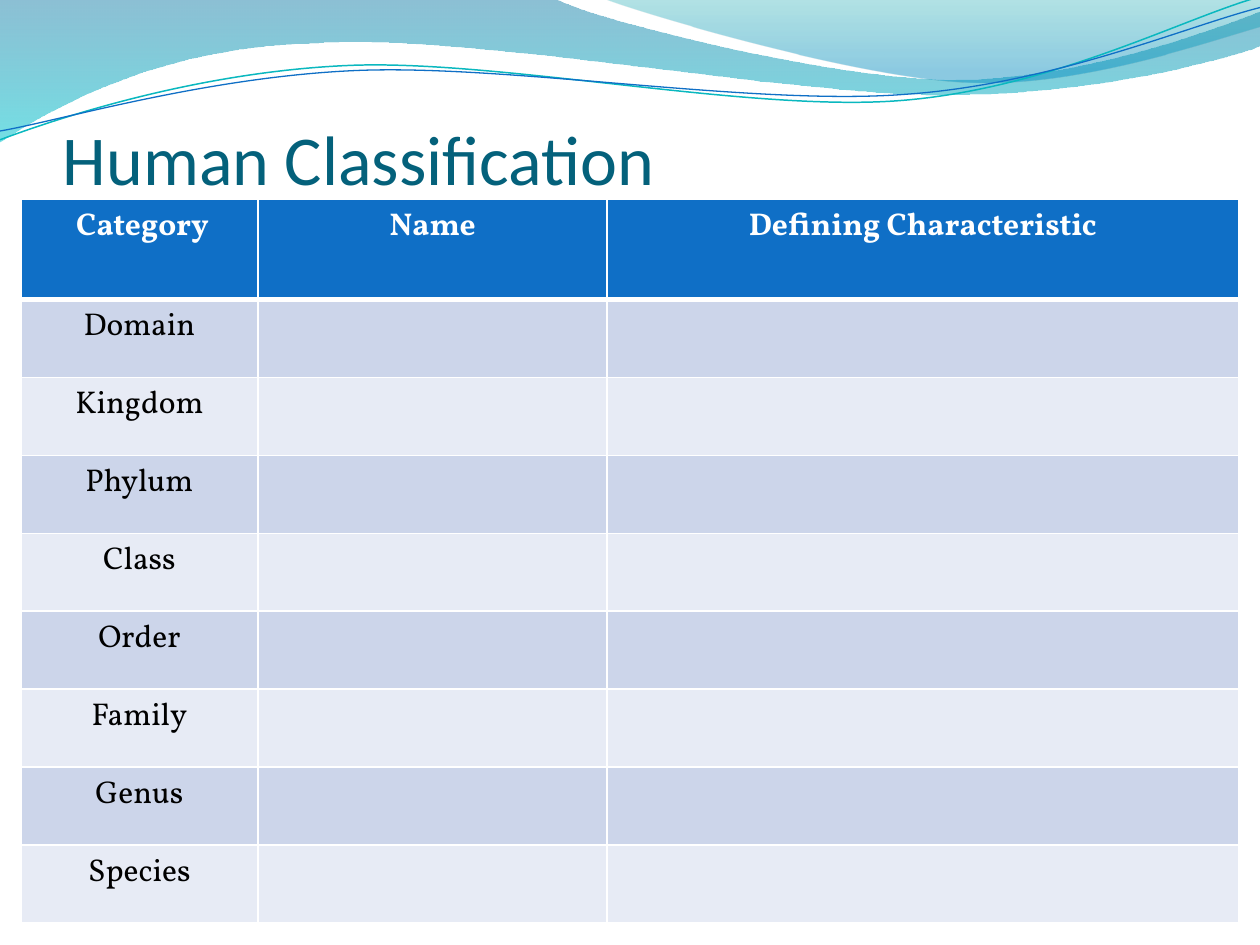
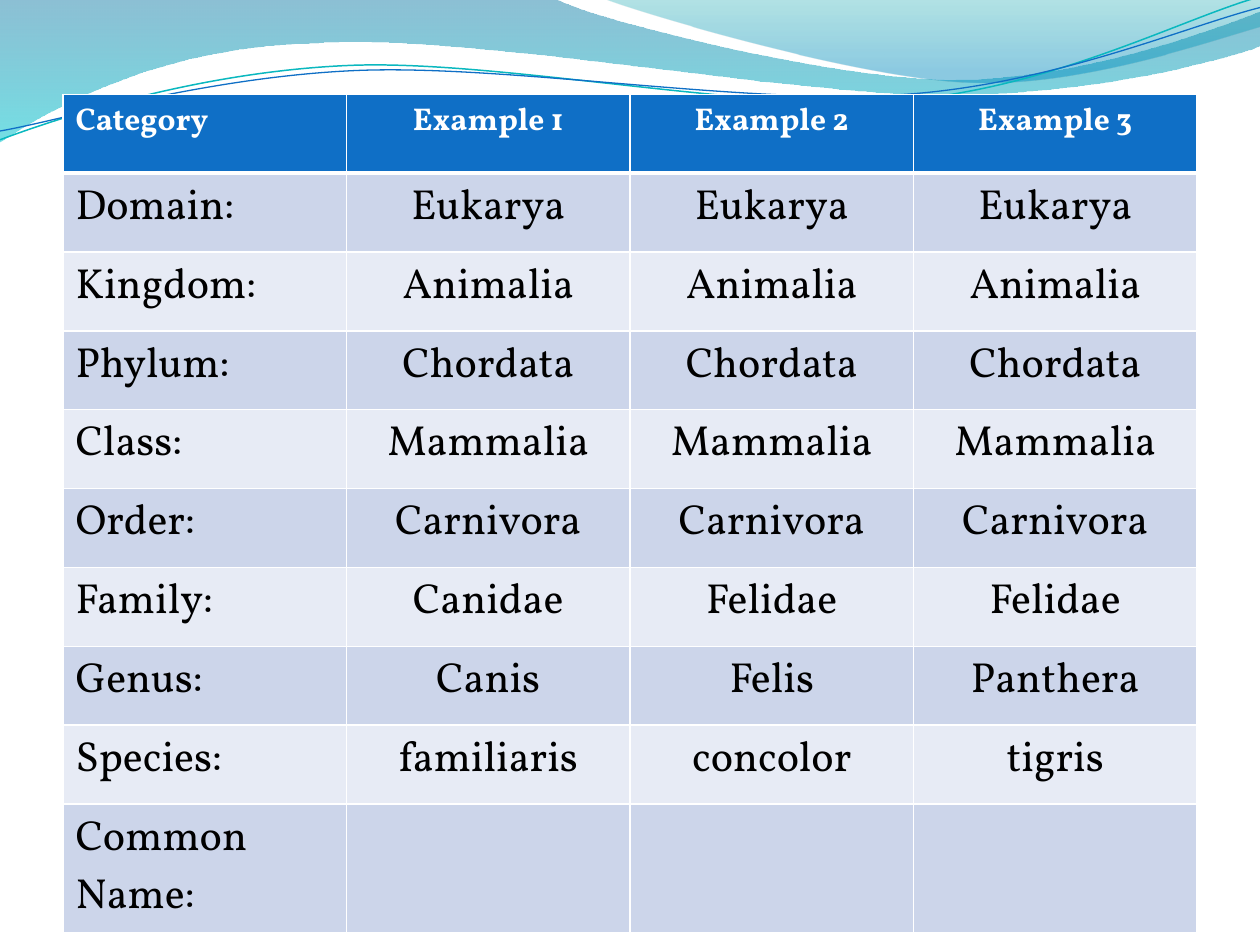
from dataclasses import dataclass

from lxml.etree import SubElement
from pptx import Presentation
from pptx.dml.color import RGBColor
from pptx.enum.text import MSO_ANCHOR, PP_ALIGN
from pptx.oxml import parse_xml
from pptx.oxml.ns import nsdecls, qn
from pptx.util import Cm, Pt


@dataclass(frozen=True)
class Theme:
    title_color: str = "04617B"
    header_fill: str = "0F6FC6"
    header_text: str = "FFFFFF"
    body_text: str = "000000"
    odd_row: str = "CCD5EA"
    even_row: str = "E7EBF5"
    rule: str = "FFFFFF"
    teal_line: str = "0AB8BF"
    blue_line: str = "0F6FC6"
    broad_wave: tuple = ((0, "0074A1", 45), (1, "00C6CF", 55))
    corner_wave: tuple = ((0, "00A1A9", 30), (0.8, "008BBF", 45))
    title_font: str = "Calibri"
    table_font: str = "Vollkorn"
    title_size: int = 40
    header_size: int = 18
    rank_size: int = 18
    example_size: int = 24
    thin_rule: int = 1
    thick_rule: int = 3


THEME = Theme()
WAVE_UNIT = Cm(2.54) / 100

BROAD_WAVE = [
    (0, 0), (440, -1),
    (476, 17, 664, 63, 758, 63), (853, 63, 958, 26, 1000, 9),
    (1001, 36),
    (983, 44, 870, 76, 746, 75), (622, 75, 382, 28, 257, 34),
    (129, 36, 46, 83, -1, 113),
]
CORNER_WAVE = [
    (479, -1),
    (509, 11, 682, 62, 769, 65), (856, 69, 961, 32, 1000, 21),
    (1000, 0),
]
TEAL_CURVE = [
    (0, 111),
    (48, 93, 158, 57, 277, 52), (395, 47, 593, 89, 713, 80),
    (833, 71, 938, 15, 998, -2),
]
BLUE_CURVE = [
    (0, 104),
    (47, 96, 164, 61, 283, 56), (403, 51, 597, 84, 717, 75),
    (836, 67, 941, 21, 1000, 6),
]

RANKS = ["Domain", "Kingdom", "Phylum", "Class", "Order", "Family", "Genus", "Species"]
SHARED_TAXA = ["Eukarya", "Animalia", "Chordata", "Mammalia", "Carnivora"]
EXAMPLES = [
    SHARED_TAXA + ["Canidae", "Canis", "familiaris"],
    SHARED_TAXA + ["Felidae", "Felis", "concolor"],
    SHARED_TAXA + ["Felidae", "Panthera", "tigris"],
]


def rgb(color):
    return RGBColor.from_string(color)


def bend_segments(outline_shape, segments):
    steps = iter(list(outline_shape._element.iter(qn("a:lnTo"))))
    for segment in segments:
        first = next(steps)
        if len(segment) == 6:
            first.tag = qn("a:cubicBezTo")
            for _ in range(2):
                follower = next(steps)
                first.append(follower[0])
                follower.getparent().remove(follower)


def add_outline(slide, outline, closed):
    start, *segments = outline
    points = [segment[i:i + 2] for segment in segments for i in range(0, len(segment), 2)]
    builder = slide.shapes.build_freeform(*start, scale=WAVE_UNIT)
    builder.add_line_segments(points, close=closed)
    outline_shape = builder.convert_to_shape()
    bend_segments(outline_shape, segments)
    outline_shape.shadow.inherit = False
    return outline_shape


def add_wave(slide, outline, stops):
    wave = add_outline(slide, outline, True)
    wave.line.fill.background()
    wave.fill.gradient()
    wave.fill.gradient_angle = 270
    for stop, (position, color, _) in zip(wave.fill.gradient_stops, stops):
        stop.position = position
        stop.color.rgb = rgb(color)
    tints = wave._element.spPr.iter(qn("a:srgbClr"))
    for tint, (_, _, opacity) in zip(tints, stops):
        SubElement(tint, qn("a:alpha"), val=str(opacity * 1000))


def add_curve(slide, outline, color, width):
    curve = add_outline(slide, outline, False)
    curve.fill.background()
    curve.line.color.rgb = rgb(color)
    curve.line.width = Pt(width)


def add_wave_band(slide):
    add_wave(slide, BROAD_WAVE, THEME.broad_wave)
    add_wave(slide, CORNER_WAVE, THEME.corner_wave)
    add_curve(slide, TEAL_CURVE, THEME.teal_line, 0.85)
    add_curve(slide, BLUE_CURVE, THEME.blue_line, 0.75)


def add_run(paragraph, text, font, size, color, bold=False):
    run = paragraph.add_run()
    run.text = text
    run.font.name = font
    run.font.size = Pt(size)
    run.font.bold = bold
    run.font.color.rgb = rgb(color)


def add_title(slide, text):
    heading = slide.shapes.add_textbox(Cm(1.27), Cm(0.84), Cm(22.86), Cm(3.18)).text_frame
    heading.word_wrap = True
    heading.vertical_anchor = MSO_ANCHOR.BOTTOM
    heading.margin_left = heading.margin_right = heading.margin_bottom = 0
    heading.margin_top = Cm(0.13)
    add_run(heading.paragraphs[0], text, THEME.title_font, THEME.title_size, THEME.title_color)


def set_borders(cell, top, bottom):
    widths = {"lnL": THEME.thin_rule, "lnR": THEME.thin_rule, "lnT": top, "lnB": bottom}
    properties = cell._tc.get_or_add_tcPr()
    for index, (side, width) in enumerate(widths.items()):
        properties.insert(index, parse_xml(
            f'<a:{side} {nsdecls("a")} w="{Pt(width)}"><a:solidFill>'
            f'<a:srgbClr val="{THEME.rule}"/></a:solidFill></a:{side}>'))


def fill_cell(cell, text, row, body_size, align):
    header = row == 0
    band = THEME.odd_row if row % 2 else THEME.even_row
    cell.fill.solid()
    cell.fill.fore_color.rgb = rgb(THEME.header_fill if header else band)
    set_borders(cell,
                THEME.thick_rule if row == 1 else THEME.thin_rule,
                THEME.thick_rule if header else THEME.thin_rule)
    paragraph = cell.text_frame.paragraphs[0]
    paragraph.alignment = align
    if text:
        add_run(paragraph, text, THEME.table_font,
                THEME.header_size if header else body_size,
                THEME.header_text if header else THEME.body_text, header)


def add_classification(slide, rows, left, top, widths, heights, body_size, label_align):
    grid = slide.shapes.add_table(len(rows), len(widths), left, top,
                                  sum(widths), sum(heights)).table
    for column, width in zip(grid.columns, widths):
        column.width = width
    for grid_row, height in zip(grid.rows, heights):
        grid_row.height = height
    for r, texts in enumerate(rows):
        for c, text in enumerate(texts):
            align = PP_ALIGN.CENTER if c else label_align
            fill_cell(grid.cell(r, c), text, r, body_size, align)


def add_human_slide(slide):
    add_wave_band(slide)
    add_title(slide, "Human Classification")
    rows = [[" Category", "Name", "Defining Characteristic"]]
    rows += [[rank, "", ""] for rank in RANKS]
    add_classification(slide, rows, Cm(0.42), Cm(4.02),
                       [Cm(4.78), Cm(7.04), Cm(12.73)],
                       [Cm(2.02)] + [Cm(1.57)] * len(RANKS),
                       THEME.rank_size, PP_ALIGN.CENTER)


def add_examples_slide(slide):
    add_wave_band(slide)
    rows = [["Category"] + [f"Example {n}" for n in range(1, len(EXAMPLES) + 1)]]
    rows += [[f"{rank}:", *taxa] for rank, *taxa in zip(RANKS, *EXAMPLES)]
    rows.append(["Common Name:"] + [""] * len(EXAMPLES))
    add_classification(slide, rows, Cm(1.27), Cm(1.9),
                       [Cm(22.86) // 4] * 4,
                       [Cm(1.59)] * (len(rows) - 1) + [Cm(2.6)],
                       THEME.example_size, PP_ALIGN.LEFT)


def main():
    deck = Presentation()
    deck.slide_width, deck.slide_height = Cm(25.4), Cm(19.05)
    blank = deck.slide_layouts[6]
    for add_content in (add_human_slide, add_examples_slide):
        add_content(deck.slides.add_slide(blank))
    deck.save("out.pptx")


if __name__ == "__main__":
    main()
